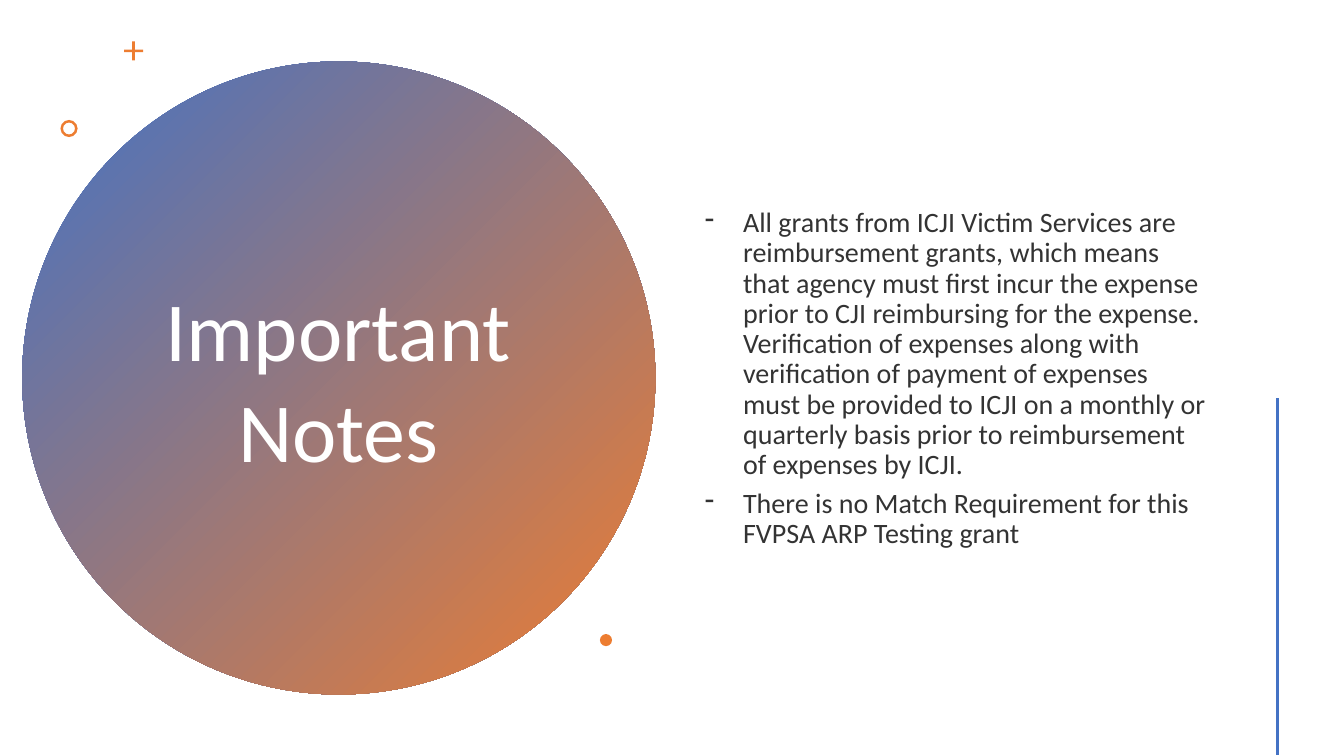
from dataclasses import dataclass

import pptx
import pptx.dml.color
import pptx.enum.shapes
import pptx.enum.text
import pptx.oxml.ns
import pptx.util
from lxml import etree

Inches = pptx.util.Inches
Pt = pptx.util.Pt
Shape = pptx.enum.shapes.MSO_SHAPE
Align = pptx.enum.text.PP_ALIGN
qn = pptx.oxml.ns.qn


@dataclass(frozen=True)
class Theme:
    font: str = "Calibri"
    title_size: int = 60
    body_size: int = 20
    white: str = "FFFFFF"
    text: str = "333333"
    blue: str = "4472C4"
    orange: str = "ED7D31"


def rgb(value):
    return pptx.dml.color.RGBColor.from_string(value)


def write_text(paragraph, text, *, font, size, color, align=Align.LEFT,
               line_spacing=1.0, space_after=0):
    """Write one formatted run into a paragraph."""
    paragraph.alignment = align
    paragraph.line_spacing = line_spacing
    paragraph.space_before = Pt(0)
    paragraph.space_after = Pt(space_after)
    run = paragraph.add_run()
    run.text = text
    run.font.name = font
    run.font.size = Pt(size)
    run.font.color.rgb = rgb(color)


def add_dash(paragraph, indent):
    """Give a paragraph a hanging dash bullet."""
    properties = paragraph._p.get_or_add_pPr()
    properties.set("marL", str(Inches(indent)))
    properties.set("indent", str(-Inches(indent)))
    etree.SubElement(properties, qn("a:buFontTx"))
    etree.SubElement(properties, qn("a:buChar")).set("char", "-")


class SlideBuilder:
    def __init__(self, slide, theme):
        self.slide = slide
        self.theme = theme

    def shape(self, kind, left, top, size, color=None, adjustment=None):
        shape = self.slide.shapes.add_shape(
            kind, Inches(left), Inches(top), Inches(size), Inches(size))
        shape.shadow.inherit = False
        shape.line.fill.background()
        if adjustment is not None:
            shape.adjustments[0] = adjustment
        if color:
            shape.fill.solid()
            shape.fill.fore_color.rgb = rgb(color)
        return shape

    def gradient_circle(self, left, top, size, colors):
        circle = self.shape(Shape.OVAL, left, top, size)
        circle.fill.gradient()
        circle.fill.gradient_angle = 315
        for stop, color in zip(circle.fill.gradient_stops, colors):
            stop.color.rgb = rgb(color)

    def line(self, start, end, color, width):
        connector = self.slide.shapes.add_connector(
            pptx.enum.shapes.MSO_CONNECTOR.STRAIGHT,
            *(Inches(value) for value in (*start, *end)))
        connector.line.color.rgb = rgb(color)
        connector.line.width = Pt(width)
        etree.SubElement(connector._element.spPr, qn("a:effectLst"))

    def place(self, placeholder, left, top, width, height):
        """Move a placeholder, bring it to the front and return its frame."""
        placeholder.left, placeholder.top = Inches(left), Inches(top)
        placeholder.width, placeholder.height = Inches(width), Inches(height)
        element = placeholder._element
        element.getparent().append(element)
        frame = placeholder.text_frame
        frame.word_wrap = True
        frame.auto_size = pptx.enum.text.MSO_AUTO_SIZE.NONE
        frame.vertical_anchor = pptx.enum.text.MSO_ANCHOR.MIDDLE
        return frame

    def title(self, text, *box):
        frame = self.place(self.slide.shapes.title, *box)
        write_text(frame.paragraphs[0], text, font=self.theme.font,
                   size=self.theme.title_size, color=self.theme.white,
                   align=Align.CENTER)

    def dash_list(self, items, *box):
        frame = self.place(self.slide.placeholders[1], *box)
        for index, item in enumerate(items):
            paragraph = frame.add_paragraph() if index else frame.paragraphs[0]
            write_text(paragraph, item, font=self.theme.font,
                       size=self.theme.body_size, color=self.theme.text,
                       line_spacing=0.9, space_after=6)
            add_dash(paragraph, 0.38)


NOTES = [
    "All grants from ICJI Victim Services are reimbursement grants, which "
    "means that agency must first incur the expense prior to CJI reimbursing "
    "for the expense. Verification of expenses along with verification of "
    "payment of expenses must be provided to ICJI on a monthly or quarterly "
    "basis prior to reimbursement of expenses by ICJI.",
    "There is no Match Requirement for this FVPSA ARP Testing grant",
]


def main():
    presentation = pptx.Presentation()
    presentation.slide_width = Inches(13.33)
    presentation.slide_height = Inches(7.5)
    slide = presentation.slides.add_slide(presentation.slide_layouts[1])
    theme = Theme()
    builder = SlideBuilder(slide, theme)

    # Large circle with small accents around it
    builder.gradient_circle(0.22, 0.61, 6.28, (theme.blue, theme.orange))
    builder.shape(Shape.CROSS, 1.23, 0.41, 0.19, theme.orange, 0.43)
    builder.shape(Shape.DONUT, 0.6, 1.19, 0.17, theme.orange, 0.15)
    builder.shape(Shape.OVAL, 5.95, 6.29, 0.12, theme.orange)

    # Notes and the vertical rule beside them
    builder.dash_list(NOTES, 6.89, 0.57, 5.22, 6.38)
    builder.line((12.67, 3.95), (12.67, 7.49), theme.blue, 2)

    # Title on the circle
    builder.title("Important Notes", 1.14, 2.69, 4.43, 2.12)

    presentation.save("out.pptx")


if __name__ == "__main__":
    main()
